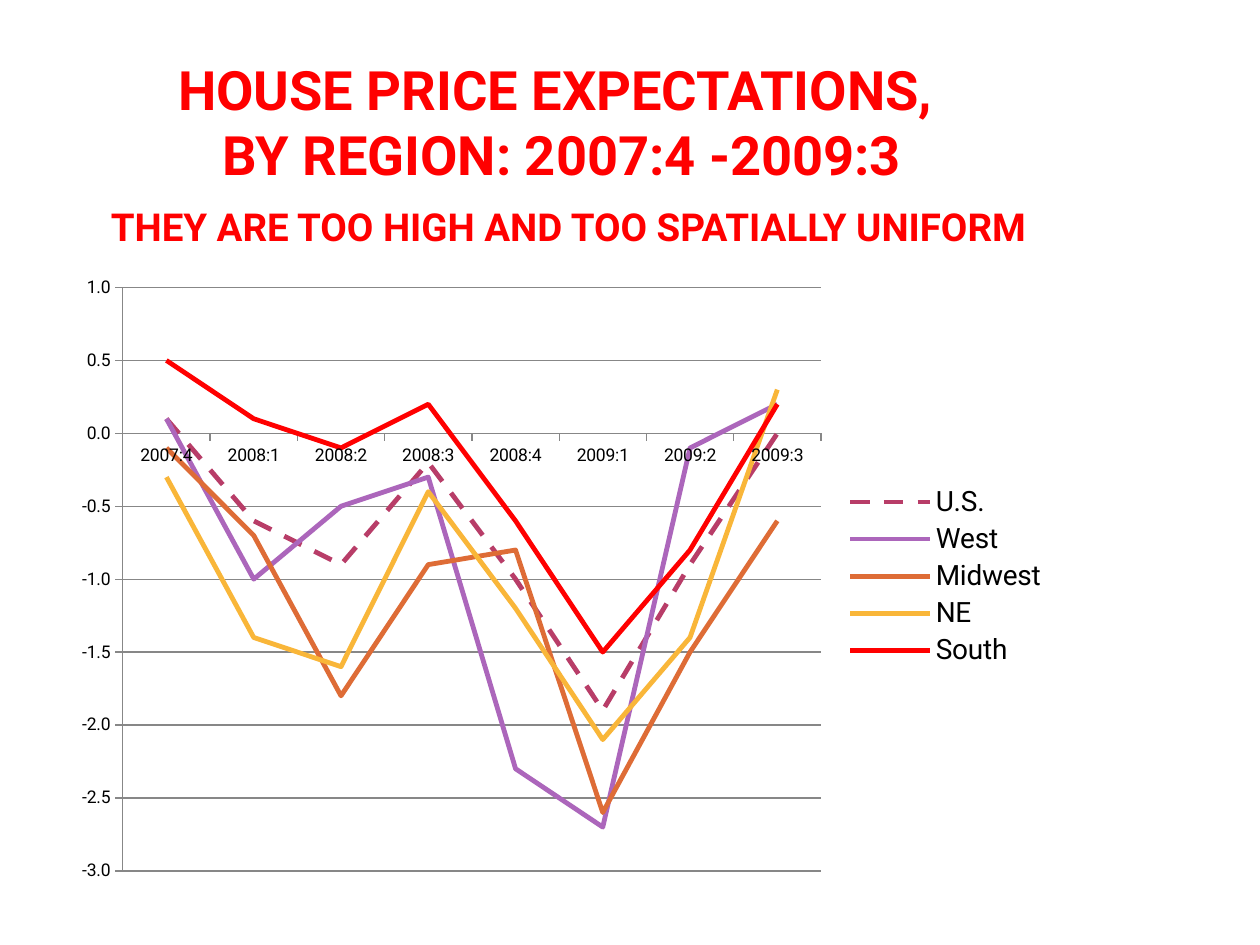
import pptx
import pptx.chart.data
import pptx.dml.color
import pptx.enum.chart
import pptx.enum.dml
import pptx.enum.text
import pptx.oxml
import pptx.oxml.ns
import pptx.util

Pt = pptx.util.Pt
FONT = "Roboto"
COLORS = {
    "title": "FF0000", "text": "000000", "axis": "878787",
    "U.S.": "B83D68", "West": "AC66BB", "Midwest": "DE6C36",
    "NE": "F9B639", "South": "FF0000",
}
QUARTERS = ["2007:4", "2008:1", "2008:2", "2008:3",
            "2008:4", "2009:1", "2009:2", "2009:3"]
EXPECTATIONS = {
    "U.S.": [0.1, -0.6, -0.9, -0.2, -1, -1.9, -0.9, 0],
    "West": [0.1, -1, -0.5, -0.3, -2.3, -2.7, -0.1, 0.2],
    "Midwest": [-0.1, -0.7, -1.8, -0.9, -0.8, -2.6, -1.5, -0.6],
    "NE": [-0.3, -1.4, -1.6, -0.4, -1.2, -2.1, -1.4, 0.3],
    "South": [0.5, 0.1, -0.1, 0.2, -0.6, -1.5, -0.8, 0.2],
}


def rgb(name):
    return pptx.dml.color.RGBColor.from_string(COLORS[name])


def style_font(font, size, color="text", bold=False):
    font.name = FONT
    font.size = Pt(size)
    font.bold = bold
    font.color.rgb = rgb(color)


def add_text(para, text, **style):
    """Append text to a paragraph, with a line break at each newline."""
    for index, line in enumerate(text.split("\n")):
        if index:
            para.add_line_break()
        if line:
            span = para.add_run()
            span.text = line
            style_font(span.font, **style)


def add_title(page, left, top, width, height):
    box = page.shapes.add_textbox(Pt(left), Pt(top), Pt(width), Pt(height))
    frame = box.text_frame
    frame.word_wrap = True
    frame.vertical_anchor = pptx.enum.text.MSO_ANCHOR.BOTTOM
    frame.margin_left = frame.margin_right = Pt(3.6)
    frame.margin_top = frame.margin_bottom = 0
    para = frame.paragraphs[0]
    para.alignment = pptx.enum.text.PP_ALIGN.CENTER
    add_text(para, "HOUSE PRICE EXPECTATIONS, \nBY REGION: 2007:4 -2009:3\n ",
             size=31, color="title", bold=True)
    add_text(para, "THEY ARE TOO HIGH AND TOO SPATIALLY UNIFORM",
             size=22, color="title", bold=True)


def set_plot_layout(chart, **fractions):
    """Fix the inner plot area, in fractions of the chart's size."""
    plot_area = chart.plots[0]._element.getparent()
    for old in plot_area.findall(pptx.oxml.ns.qn("c:layout")):
        plot_area.remove(old)
    modes = "".join(f'<c:{key}Mode val="edge"/>' for key in "xy")
    sizes = "".join(f'<c:{key} val="{value}"/>' for key, value in fractions.items())
    plot_area.insert(0, pptx.oxml.parse_xml(
        f'<c:layout {pptx.oxml.ns.nsdecls("c")}><c:manualLayout>'
        f'<c:layoutTarget val="inner"/>{modes}{sizes}</c:manualLayout></c:layout>'))


def style_axis(axis):
    axis.major_tick_mark = pptx.enum.chart.XL_TICK_MARK.OUTSIDE
    axis.minor_tick_mark = pptx.enum.chart.XL_TICK_MARK.NONE
    axis.format.line.color.rgb = rgb("axis")
    axis.format.line.width = Pt(0.75)
    style_font(axis.tick_labels.font, 10)


def add_price_chart(page, left, top, width, height):
    data = pptx.chart.data.CategoryChartData(number_format="0.0")
    data.categories = QUARTERS
    for region, values in EXPECTATIONS.items():
        data.add_series(region, values)
    chart = page.shapes.add_chart(
        pptx.enum.chart.XL_CHART_TYPE.LINE,
        Pt(left), Pt(top), Pt(width), Pt(height), data).chart
    chart.has_title = False
    style_font(chart.font, 10)
    chart.plots[0].vary_by_categories = False

    for series in chart.plots[0].series:
        series.smooth = False
        series.marker.style = pptx.enum.chart.XL_MARKER_STYLE.NONE
        series.format.line.color.rgb = rgb(series.name)
        series.format.line.width = Pt(2.75)
        if series.name == "U.S.":
            series.format.line.dash_style = pptx.enum.dml.MSO_LINE.DASH

    style_axis(chart.category_axis)
    scale = chart.value_axis
    style_axis(scale)
    scale.minimum_scale, scale.maximum_scale, scale.major_unit = -3, 1, 0.5
    scale.tick_labels.number_format = "0.0"
    scale.tick_labels.number_format_is_linked = False
    scale.has_major_gridlines = True
    scale.major_gridlines.format.line.color.rgb = rgb("axis")
    scale.major_gridlines.format.line.width = Pt(0.75)

    chart.has_legend = True
    chart.legend.position = pptx.enum.chart.XL_LEGEND_POSITION.RIGHT
    chart.legend.include_in_layout = False
    style_font(chart.legend.font, 16)
    set_plot_layout(chart, x=0.06, y=0.04, w=0.7, h=0.93)


def main():
    deck = pptx.Presentation()
    deck.slide_width, deck.slide_height = Pt(720), Pt(540)
    page = deck.slides.add_slide(deck.slide_layouts[6])
    add_title(page, 36, 25, 570, 119)
    add_price_chart(page, 36, 150, 570, 358.5)
    deck.save("out.pptx")


if __name__ == "__main__":
    main()
